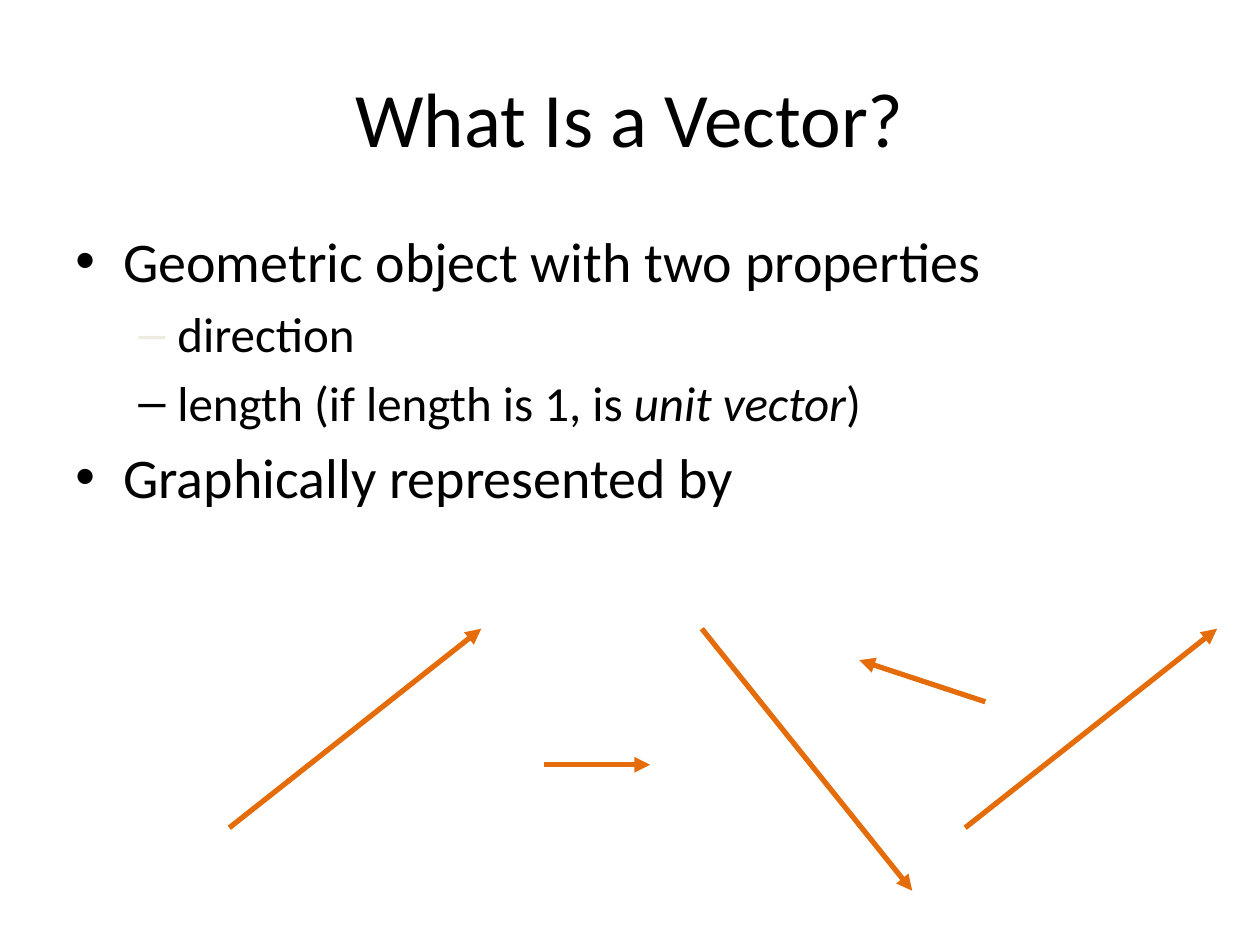
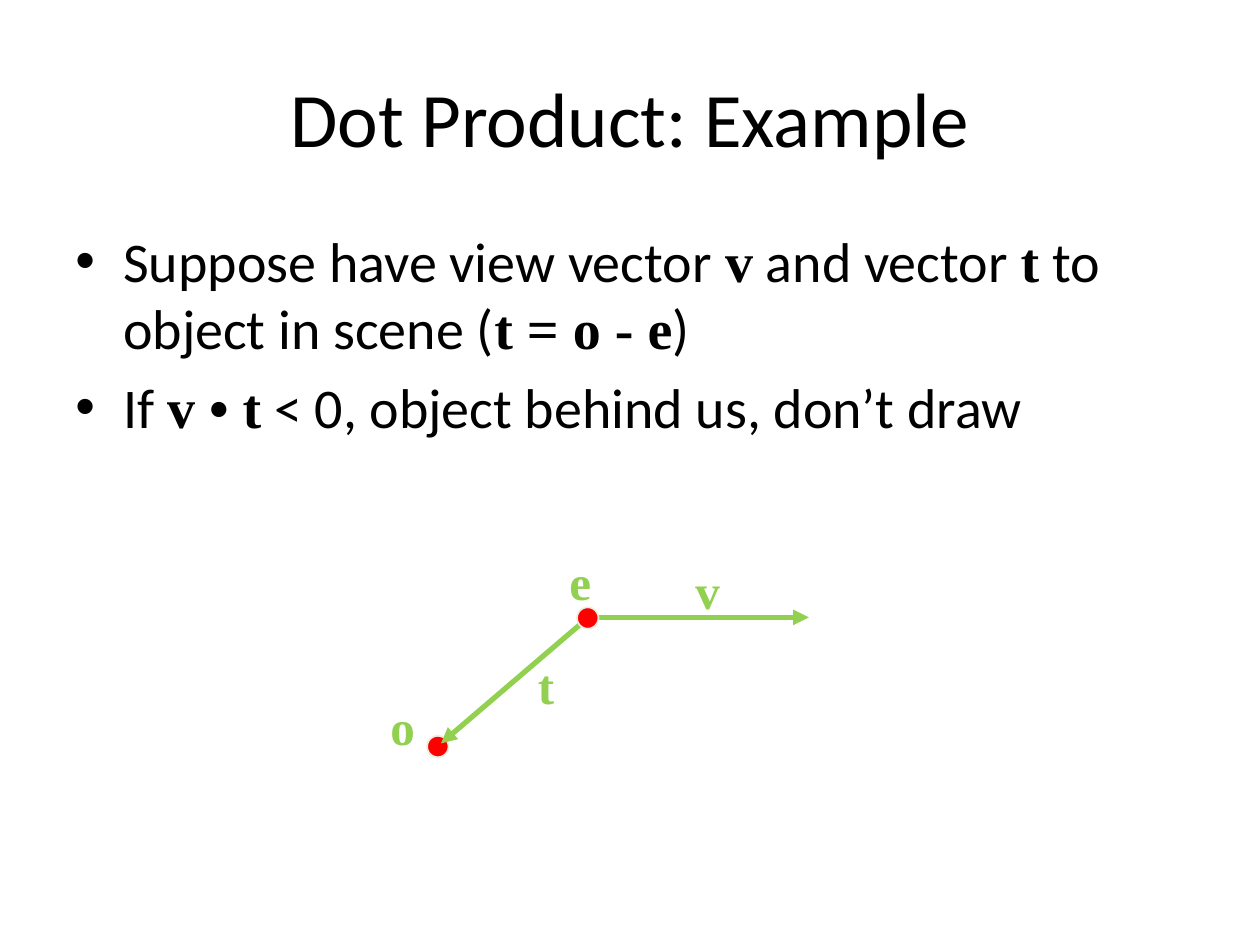
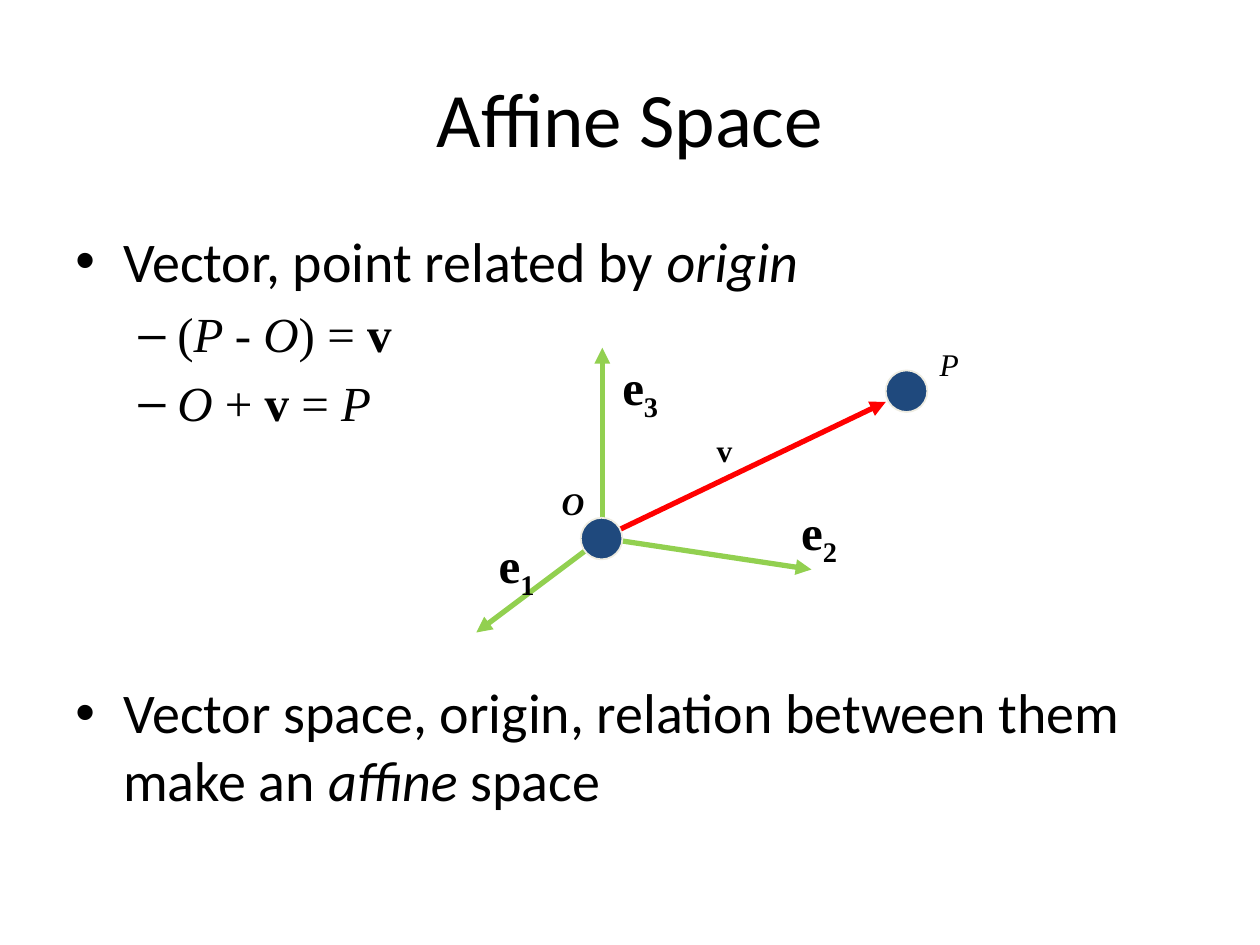
from lxml.etree import SubElement
from pptx import Presentation
from pptx.dml.color import RGBColor
from pptx.enum.shapes import MSO_CONNECTOR, MSO_SHAPE
from pptx.enum.text import MSO_ANCHOR, MSO_AUTO_SIZE, PP_ALIGN
from pptx.oxml.ns import qn
from pptx.util import Inches, Pt

# Shared look
HUES = {"ink": "000000", "pale": "EEECE1", "orange": "E46C0A",
        "green": "92D050", "red": "FF0000", "navy": "1F497D"}
SANS, SERIF = "Calibri", "Times New Roman"
STYLES = {  # t = serif, b = bold, i = italic
    "t": {"name": SERIF}, "b": {"bold": True}, "i": {"italic": True}}
LEVELS = [  # size, left margin, hanging indent, bullet
    (32, 0.38, -0.38, "•"), (28, 0.81, -0.31, "–")]

deck = Presentation()
deck.slide_width, deck.slide_height = Inches(10), Inches(7.5)
CELL = deck.slide_width / 100  # grid of 100 columns by 75 rows


def grid(*spots):
    return [round(spot * CELL) for spot in spots]


def write(para, runs, size, hue="ink"):
    for text, style in runs:
        run = para.add_run()
        run.text = text
        form = {"name": SANS, "size": Pt(size), "bold": False, "italic": False}
        for mark in style:
            form.update(STYLES.get(mark, {}))
        for key, value in form.items():
            setattr(run.font, key, value)
        run.font.color.rgb = RGBColor.from_string(HUES[hue])
        if "s" in style:  # subscript
            run._r.get_or_add_rPr().set("baseline", "-25000")


# Content: title, bullets (level, runs, options), then drawn items back to front
# arrow: hue, from, to | dot: hue, left, top, size | tag: hue, place, size, runs
TALKS = [
    ("What Is a Vector?", [
        (0, [("Geometric object with two properties", "")], {}),
        (1, [("direction", "")], {"hue": "pale"}),
        (1, [("length (if length is 1, is ", ""), ("unit vector", "i"), (")", "")], {}),
        (0, [("Graphically represented by", "")], {}),
    ], [
        ("arrow", "orange", (18.2, 65.7), (38.2, 49.9)),
        ("arrow", "orange", (55.7, 49.9), (72.4, 70.7)),
        ("arrow", "orange", (43.2, 60.7), (51.6, 60.7)),
        ("arrow", "orange", (78.2, 55.7), (68.2, 52.4)),
        ("arrow", "orange", (76.6, 65.7), (96.6, 49.9)),
    ]),
    ("Dot Product: Example", [
        (0, [("Suppose have view vector ", ""), ("v", "tb"), (" and vector ", ""),
             ("t", "tb"), (" to object in scene (", ""), ("t = o - e", "tb"),
             (")", "")], {}),
        (0, [("If ", ""), ("v • t", "tb"),
             (" < 0, object behind us, don’t draw", "")], {}),
    ], [
        ("dot", "red", (33.9, 58.4), 1.7),
        ("arrow", "green", (46.7, 49), (64.2, 49)),
        ("arrow", "green", (46.7, 49), (35, 59)),
        ("tag", "green", (54.2, 44, 4, 5.7), 28, [("v", "tb")]),
        ("tag", "green", (41.7, 51.5, 3.3, 5.7), 28, [("t", "tb")]),
        ("tag", "green", (30, 54.8, 4, 5.7), 28, [("o", "tb")]),
        ("tag", "green", (44.2, 43.3, 3.7, 5.7), 28, [("e", "tb")]),
        ("dot", "red", (45.8, 48.2), 1.7),
    ]),
    ("Affine Space", [
        (0, [("Vector, point related by ", ""), ("origin", "i")], {}),
        (1, [("(", "t"), ("P ", "ti"), ("- ", "t"), ("O", "ti"), (") = ", "t"),
             ("v", "tb")], {}),
        (1, [("O", "ti"), (" + ", "t"), ("v", "tb"), (" = ", "t"), ("P", "ti")], {}),
        (0, [("Vector space, origin, relation between them make an ", ""),
             ("affine", "i"), (" space", "")], {"gap": 141}),
    ], [
        ("arrow", "red", (48.6, 42.3), (70.3, 31.9)),
        ("dot", "navy", (70.3, 29.4), 3.3),
        ("tag", "ink", (55.9, 33.7, 3.3, 4), 18, [("v", "tb")]),
        ("tag", "ink", (73.6, 26.9, 3.5, 4), 18, [("P", "ti")]),
        ("tag", "ink", (43.6, 37.9, 3.8, 4), 18, [("O", "tbi")]),
        ("arrow", "green", (47.8, 44.3), (47.8, 27.6)),
        ("arrow", "green", (47.8, 42.7), (64.4, 45.2)),
        ("arrow", "green", (47.8, 42.7), (37.8, 50.2)),
        ("tag", "ink", (48.4, 27.8, 5.1, 5.7), 28, [("e", "tb"), ("3", "tbs")]),
        ("tag", "ink", (62.6, 39.3, 5.1, 5.7), 28, [("e", "tb"), ("2", "tbs")]),
        ("tag", "ink", (38.6, 41.9, 5.1, 5.7), 28, [("e", "tb"), ("1", "tbs")]),
        ("dot", "navy", (46.1, 41.1), 3.3),
    ]),
]

for title, points, items in TALKS:
    slide = deck.slides.add_slide(deck.slide_layouts[6])
    shapes = slide.shapes

    # Title
    frame = shapes.add_textbox(*grid(5, 3, 90, 12.5)).text_frame
    frame.word_wrap, frame.vertical_anchor = True, MSO_ANCHOR.MIDDLE
    frame.paragraphs[0].alignment = PP_ALIGN.CENTER
    write(frame.paragraphs[0], [(title, "")], 44)

    # Bullets
    frame = shapes.add_textbox(*grid(5, 17.5, 90, 49.5)).text_frame
    frame.word_wrap = True
    for order, (level, runs, extra) in enumerate(points):
        size, left, hang, sign = LEVELS[level]
        para = frame.add_paragraph() if order else frame.paragraphs[0]
        para.level = level
        para.space_before = Pt(extra.get("gap", size * 0.2))
        props = para._p.get_or_add_pPr()
        props.set("marL", str(Inches(left)))
        props.set("indent", str(Inches(hang)))
        if "hue" in extra:
            tint = SubElement(props, qn("a:buClr"))
            SubElement(tint, qn("a:srgbClr"), val=HUES[extra["hue"]])
        SubElement(props, qn("a:buFont"), typeface="Arial")
        SubElement(props, qn("a:buChar"), char=sign)
        write(para, runs, size)

    # Arrows, dots and tags
    for kind, hue, place, *rest in items:
        shade = RGBColor.from_string(HUES[hue])
        if kind == "arrow":
            arrow = shapes.add_connector(MSO_CONNECTOR.STRAIGHT,
                                         *grid(*place, *rest[0]))
            arrow.line.color.rgb, arrow.line.width = shade, Pt(3)
            SubElement(arrow.line._get_or_add_ln(), qn("a:tailEnd"), type="triangle")
            SubElement(arrow._element.spPr, qn("a:effectLst"))
        elif kind == "dot":
            dot = shapes.add_shape(MSO_SHAPE.OVAL, *grid(*place, rest[0], rest[0]))
            dot.shadow.inherit = False
            dot.fill.solid()
            dot.fill.fore_color.rgb = shade
            dot.line.color.rgb = RGBColor.from_string(HUES["pale"])
            dot.line.width = Pt(1)
        else:
            frame = shapes.add_textbox(*grid(*place)).text_frame
            frame.word_wrap = False
            frame.auto_size = MSO_AUTO_SIZE.SHAPE_TO_FIT_TEXT
            size, runs = rest
            write(frame.paragraphs[0], runs, size, hue)

deck.save("out.pptx")
